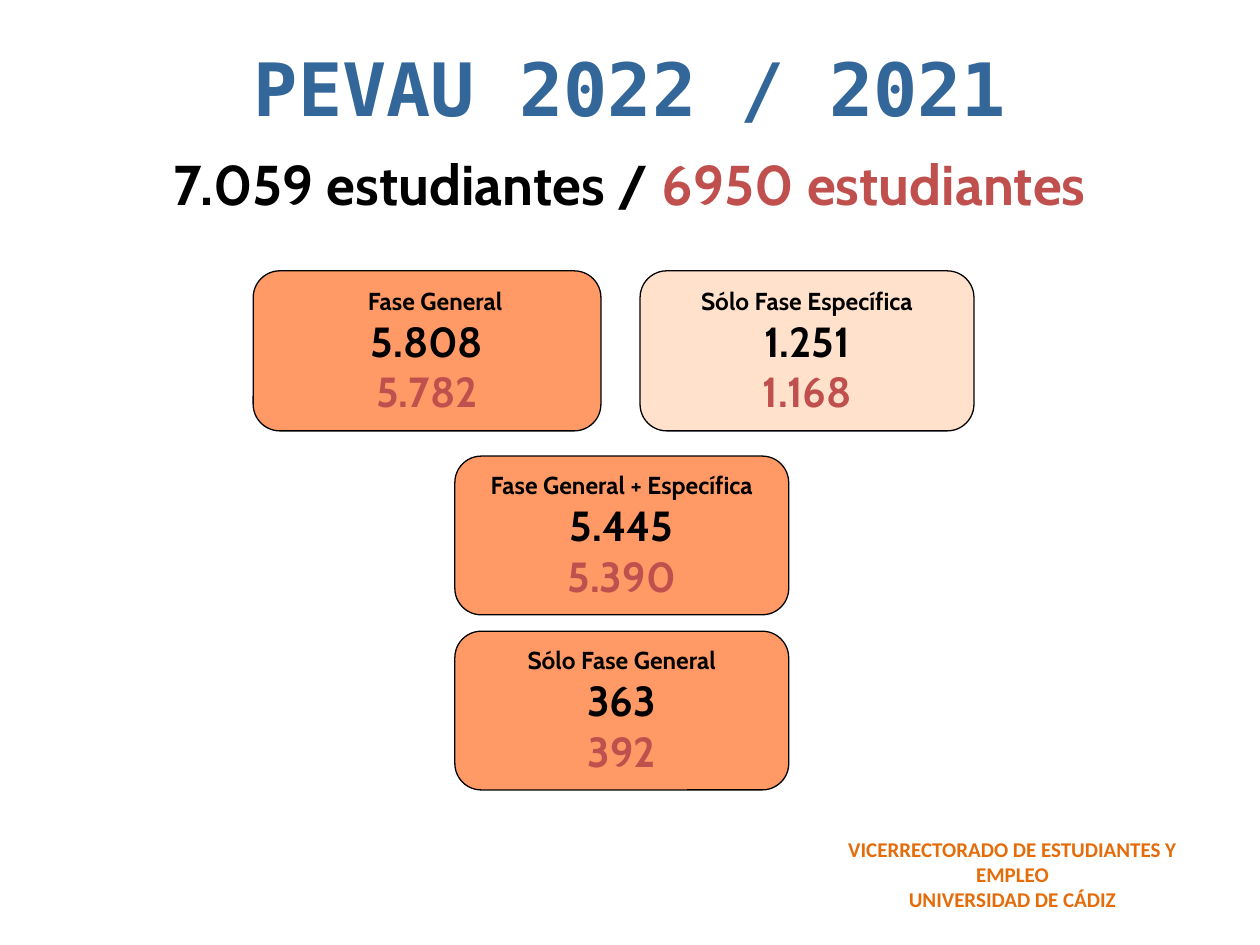
from dataclasses import dataclass

from pptx import Presentation
from pptx.dml.color import RGBColor
from pptx.enum.shapes import MSO_SHAPE
from pptx.enum.text import MSO_ANCHOR, MSO_AUTO_SIZE, PP_ALIGN
from pptx.util import Inches, Pt


@dataclass(frozen=True)
class Theme:
    blue: str = "336699"
    black: str = "000000"
    red: str = "C0504D"
    orange: str = "FF9966"
    peach: str = "FFE1CC"
    footer_orange: str = "E46C0A"
    title_font: str = "DejaVu Sans Mono"
    body_font: str = "Cabin"
    footer_font: str = "Calibri"
    title_size: int = 42
    total_size: int = 32
    figure_size: int = 24
    label_size: int = 14
    footer_size: int = 12


THEME = Theme()
CARD_WIDTH = 2.65
CARDS = [
    # left, top, width, height, fill, label, 2022 figure, 2021 figure, label indent
    (2.01, 2.15, 2.76, 1.27, THEME.orange, "Fase General", "5.808", "5.782", 0.13),
    (5.08, 2.15, CARD_WIDTH, 1.27, THEME.peach, "Sólo Fase Específica", "1.251", "1.168", 0),
    (3.61, 3.62, CARD_WIDTH, 1.26, THEME.orange, "Fase General + Específica", "5.445", "5.390", 0),
    (3.61, 5.01, CARD_WIDTH, 1.26, THEME.orange, "Sólo Fase General", "363", "392", 0),
]


def place(shape, left, top, width, height):
    shape.left, shape.top = Inches(left), Inches(top)
    shape.width, shape.height = Inches(width), Inches(height)


def set_frame(frame, horizontal=0, vertical=0, wrap=True, anchor=MSO_ANCHOR.TOP):
    frame.auto_size = MSO_AUTO_SIZE.NONE
    frame.word_wrap = wrap
    frame.vertical_anchor = anchor
    frame.margin_left = frame.margin_right = Inches(horizontal)
    frame.margin_top = frame.margin_bottom = Inches(vertical)


def add_text(paragraph, text, size, color=THEME.black, font=THEME.body_font, indent=0):
    """Add a bold run to a centred paragraph."""
    paragraph.alignment = PP_ALIGN.CENTER
    if indent:
        paragraph._p.get_or_add_pPr().set("marL", str(Inches(indent)))
    run = paragraph.add_run()
    run.text = text
    run.font.name = font
    run.font.size = Pt(size)
    run.font.bold = True
    run.font.color.rgb = RGBColor.from_string(color)


def add_title(slide):
    title = slide.shapes.title
    place(title, 0, 0.34, 10, 0.65)
    set_frame(title.text_frame, 0.07, 0.08)
    paragraph = title.text_frame.paragraphs[0]
    paragraph.line_spacing = 0.9
    paragraph.space_before = Pt(0)
    add_text(paragraph, "PEVAU 2022 / 2021", THEME.title_size,
             color=THEME.blue, font=THEME.title_font)


def add_totals(slide):
    box = slide.shapes.add_textbox(0, Inches(1.15), Inches(10), Inches(0.61))
    set_frame(box.text_frame, 0.07, 0.04)
    paragraph = box.text_frame.paragraphs[0]
    add_text(paragraph, "7.059 estudiantes / ", THEME.total_size)
    add_text(paragraph, "6950 estudiantes", THEME.total_size, color=THEME.red)


def add_card(slide, left, top, width, height, fill, label, current, previous, indent):
    card = slide.shapes.add_shape(
        MSO_SHAPE.ROUNDED_RECTANGLE,
        Inches(left), Inches(top), Inches(width), Inches(height))
    card.shadow.inherit = False
    card.fill.solid()
    card.fill.fore_color.rgb = RGBColor.from_string(fill)
    card.line.color.rgb = RGBColor.from_string(THEME.black)
    card.line.width = Pt(0.75)
    frame = card.text_frame
    set_frame(frame, wrap=False, anchor=MSO_ANCHOR.MIDDLE)
    add_text(frame.paragraphs[0], label, THEME.label_size, indent=indent)
    add_text(frame.add_paragraph(), current, THEME.figure_size)
    add_text(frame.add_paragraph(), previous, THEME.figure_size, color=THEME.red)


def add_footer(slide):
    box = slide.shapes.add_textbox(Inches(6.34), Inches(6.58), Inches(3.39), Inches(0.53))
    frame = box.text_frame
    set_frame(frame, 0.12, 0.06)
    style = {"size": THEME.footer_size, "color": THEME.footer_orange,
             "font": THEME.footer_font}
    add_text(frame.paragraphs[0], "VICERRECTORADO DE ESTUDIANTES Y EMPLEO", **style)
    add_text(frame.add_paragraph(), "UNIVERSIDAD DE CÁDIZ", **style)


def main():
    presentation = Presentation()
    presentation.slide_width = Inches(10)
    presentation.slide_height = Inches(7.5)
    slide = presentation.slides.add_slide(presentation.slide_layouts[5])
    for card in CARDS:
        add_card(slide, *card)
    add_title(slide)
    add_totals(slide)
    add_footer(slide)
    presentation.save("out.pptx")


if __name__ == "__main__":
    main()
